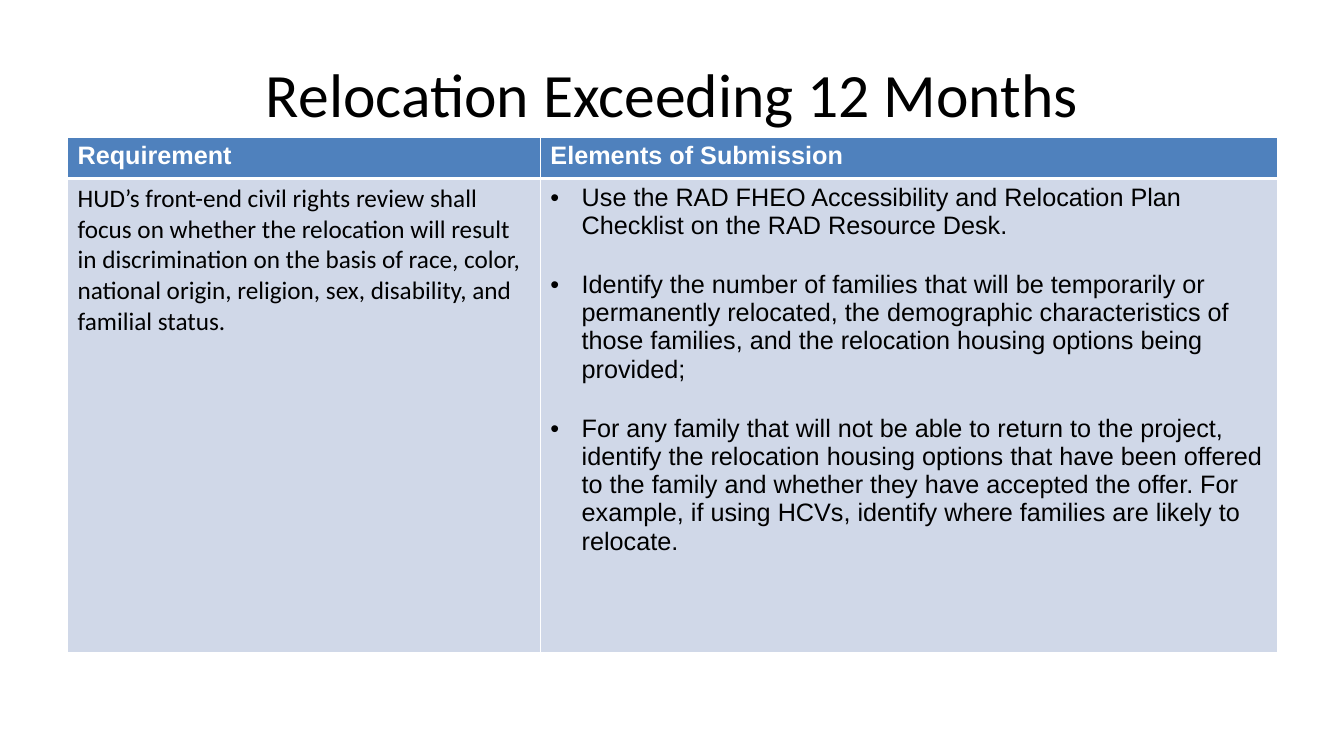
from dataclasses import dataclass

from lxml import etree
from pptx import Presentation
from pptx.dml.color import RGBColor
from pptx.enum.text import MSO_ANCHOR, PP_ALIGN
from pptx.oxml.ns import qn
from pptx.util import Inches, Pt

MIDDLE = MSO_ANCHOR.MIDDLE
CENTER = PP_ALIGN.CENTER
TITLE_ONLY = 5


@dataclass(frozen=True)
class Theme:
    heading_font: str = "Calibri"
    body_font: str = "Arial"
    title_size: int = 44
    body_size: int = 18
    bullet_gap: int = 22
    text: str = "000000"
    white: str = "FFFFFF"
    header_fill: str = "4F81BD"
    body_fill: str = "D0D8E8"


HEADERS = ["Requirement", "Elements of Submission"]
REQUIREMENT = (
    "HUD’s front-end civil rights review shall focus on whether the relocation "
    "will result in discrimination on the basis of race, color, national origin, "
    "religion, sex, disability, and familial status."
)
ELEMENTS = [
    "Use the RAD FHEO Accessibility and Relocation Plan Checklist on the RAD "
    "Resource Desk.",
    "Identify the number of families that will be temporarily or permanently "
    "relocated, the demographic characteristics of those families, and the "
    "relocation housing options being provided;",
    "For any family that will not be able to return to the project, identify the "
    "relocation housing options that have been offered to the family and whether "
    "they have accepted the offer. For example, if using HCVs, identify where "
    "families are likely to relocate.",
]


class SlideBuilder:
    def __init__(self, slide, theme):
        self.slide = slide
        self.theme = theme

    def style(self, p, font, size, color, bold=False):
        for r in p.runs:
            r.font.name = font
            r.font.size = Pt(size)
            r.font.bold = bold
            r.font.color.rgb = RGBColor.from_string(color)

    def title(self, text, left, top, width, height):
        sp = self.slide.shapes.title
        sp.left, sp.top = Inches(left), Inches(top)
        sp.width, sp.height = Inches(width), Inches(height)
        tf = sp.text_frame
        tf.text = text
        tf.vertical_anchor = MIDDLE
        p = tf.paragraphs[0]
        p.alignment = CENTER
        self.style(p, self.theme.heading_font, self.theme.title_size, self.theme.text)

    def table(self, left, top, col_widths, row_heights):
        frame = self.slide.shapes.add_table(
            len(row_heights), len(col_widths), Inches(left), Inches(top),
            Inches(sum(col_widths)), Inches(sum(row_heights)))
        table = frame.table
        table.horz_banding = False
        for column, width in zip(table.columns, col_widths):
            column.width = Inches(width)
        for row, height in zip(table.rows, row_heights):
            row.height = Inches(height)
        return table

    def cell(self, cell, paragraphs, font, color, fill, bold=False,
             bullets=False, top=1, bottom=1):
        cell.fill.solid()
        cell.fill.fore_color.rgb = RGBColor.from_string(fill)
        self.borders(cell, {"L": 1, "R": 1, "T": top, "B": bottom})
        tf = cell.text_frame
        for i, text in enumerate(paragraphs):
            p = tf.paragraphs[0] if i == 0 else tf.add_paragraph()
            p.text = text
            if bullets:
                self.bullet(p)
            if i:
                p.space_before = Pt(self.theme.bullet_gap)
            self.style(p, font, self.theme.body_size, color, bold)

    def borders(self, cell, widths):
        # Border lines come before the fill in the cell properties
        tcPr = cell._tc.get_or_add_tcPr()
        for i, (side, width) in enumerate(widths.items()):
            ln = etree.Element(qn(f"a:ln{side}"), w=str(Pt(width)))
            fill = etree.SubElement(ln, qn("a:solidFill"))
            etree.SubElement(fill, qn("a:srgbClr"), val=self.theme.white)
            tcPr.insert(i, ln)

    def bullet(self, p):
        pPr = p._p.get_or_add_pPr()
        indent = Inches(0.31)
        pPr.set("marL", str(indent))
        pPr.set("indent", str(-indent))
        etree.SubElement(pPr, qn("a:buFont"), typeface=self.theme.body_font)
        etree.SubElement(pPr, qn("a:buChar"), char="•")


def main():
    prs = Presentation()
    prs.slide_width, prs.slide_height = Inches(13.33), Inches(7.5)
    theme = Theme()
    s = SlideBuilder(prs.slides.add_slide(prs.slide_layouts[TITLE_ONLY]), theme)

    # Title
    s.title("Relocation Exceeding 12 Months", 0.67, 0.3, 12, 1.25)

    # Table header
    table = s.table(0.67, 1.36, [4.69, 7.31], [0.41, 4.7])
    for i, header in enumerate(HEADERS):
        s.cell(table.cell(0, i), [header], theme.body_font, theme.white,
               theme.header_fill, bold=True, bottom=3)

    # Table body
    s.cell(table.cell(1, 0), [REQUIREMENT], theme.heading_font, theme.text,
           theme.body_fill, top=3)
    s.cell(table.cell(1, 1), ELEMENTS, theme.body_font, theme.text,
           theme.body_fill, bullets=True, top=3)

    prs.save("out.pptx")


if __name__ == "__main__":
    main()
